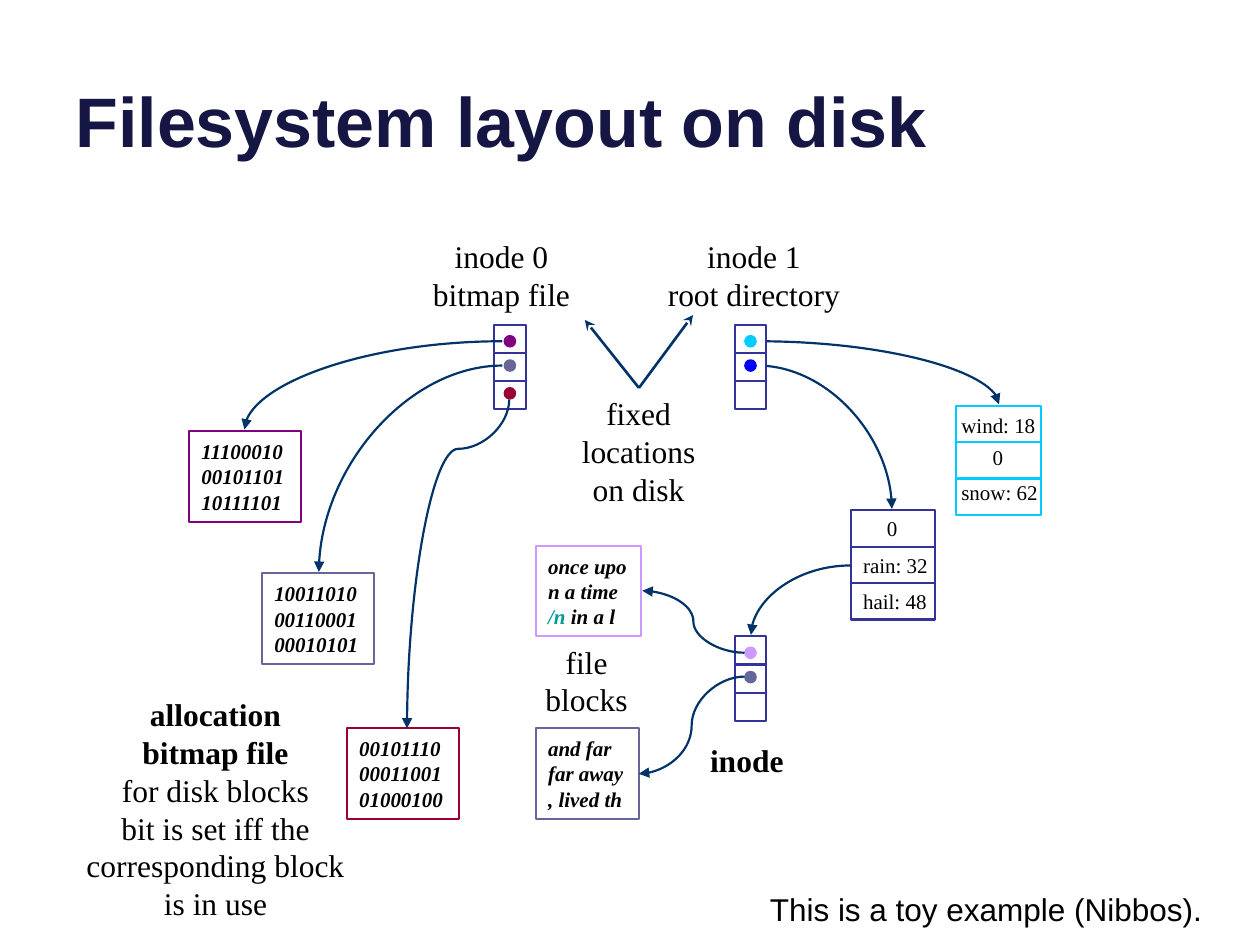
"""Build a slide that shows how a small filesystem lies on disk."""
import pptx
import pptx.util
import pptx.dml.color
import pptx.enum.shapes
import pptx.enum.text
import pptx.oxml.ns
from lxml import etree

Cm = pptx.util.Cm
Pt = pptx.util.Pt
Shape = pptx.enum.shapes.MSO_SHAPE
Link = pptx.enum.shapes.MSO_CONNECTOR
Align = pptx.enum.text.PP_ALIGN
Anchor = pptx.enum.text.MSO_ANCHOR
qn = pptx.oxml.ns.qn


def color(code):
    return pptx.dml.color.RGBColor.from_string(code)


class Deck:
    ink = "000000"
    navy = "161645"
    blue = "333399"
    wire = "003367"
    serif = "Times New Roman"
    sans = "Arial"
    thin = 1.25
    side = 0.64
    tall = 1.7
    rows = (0.33, 0.82, 1.38)

    def __init__(self):
        self.show = pptx.Presentation()
        self.show.slide_width = Cm(25.4)
        self.show.slide_height = Cm(19.05)
        self.slide = self.show.slides.add_slide(self.show.slide_layouts[5])
        self.shapes = self.slide.shapes

    def style(self, para, size, face=None, bold=False, slant=False, tint=None):
        font = para.font
        font.name = face or self.serif
        font.size = Pt(size)
        font.bold = bold
        font.italic = slant
        font.color.rgb = color(tint or self.ink)

    def title(self, words):
        head = self.shapes.title
        head.left, head.top = Cm(1.27), Cm(-0.94)
        head.width, head.height = Cm(22.86), Cm(4.32)
        frame = head.text_frame
        frame.text = words
        frame.vertical_anchor = Anchor.BOTTOM
        para = frame.paragraphs[0]
        para.alignment = Align.LEFT
        self.style(para, 40, self.sans, True, tint=self.navy)

    def label(self, x, y, w, h, lines, size=18, align=Align.CENTER,
              wrap=False, face=None, bold=0):
        box = self.shapes.add_textbox(Cm(x), Cm(y), Cm(w), Cm(h))
        frame = box.text_frame
        frame.text = "\n".join(lines)
        frame.word_wrap = wrap
        for i, para in enumerate(frame.paragraphs):
            para.alignment = align
            self.style(para, size, face, i < bold)

    def shape(self, kind, x, y, w, h, line, fill=None):
        item = self.shapes.add_shape(kind, Cm(x), Cm(y), Cm(w), Cm(h))
        item.shadow.inherit = False
        if fill:
            item.fill.solid()
            item.fill.fore_color.rgb = color(fill)
        else:
            item.fill.background()
        item.line.color.rgb = color(line)
        item.line.width = Pt(self.thin)
        return item

    def block(self, x, y, w, tint, lines):
        item = self.shape(Shape.RECTANGLE, x, y, w, 1.83, tint)
        frame = item.text_frame
        frame.word_wrap = False
        frame.text = "\n".join(lines)
        for para in frame.paragraphs:
            para.alignment = Align.LEFT
            self.style(para, 12, bold=True, slant=True)
        return frame

    def link(self, kind, start, end, tint=None, width=None):
        ends = [Cm(v) for v in (*start, *end)]
        item = self.shapes.add_connector(kind, *ends)
        item.line.color.rgb = color(tint or self.wire)
        item.line.width = Pt(width or self.thin)
        etree.SubElement(item._element.spPr, qn("a:effectLst"))
        return item

    def tip(self, item, tag, kind):
        line = item._element.spPr.find(qn("a:ln"))
        etree.SubElement(line, qn(tag), type=kind)

    def arrow(self, start, end):
        item = self.link(Link.STRAIGHT, start, end, width=1.5)
        self.tip(item, "a:headEnd", "stealth")

    def curve(self, start, end, bend=2, turn=0, mid=None):
        item = self.link(Link.CURVE, start, end)
        self.tip(item, "a:tailEnd", "triangle")
        props = item._element.spPr
        geom = props.find(qn("a:prstGeom"))
        geom.set("prst", f"curvedConnector{bend}")
        if turn:
            props.find(qn("a:xfrm")).set("rot", str(turn * 60000))
        if mid:
            etree.SubElement(geom.find(qn("a:avLst")), qn("a:gd"),
                             name="adj1", fmla=f"val {round(mid * 100000)}")

    def stack(self, x, y, w, h, tint):
        self.shape(Shape.RECTANGLE, x, y, w, h, tint, "FFFFFF")
        for i in (1, 2):
            level = y + h * i / 3
            self.link(Link.STRAIGHT, (x, level), (x + w, level), tint)

    def inode(self, x, y, tints):
        self.stack(x, y, self.side, self.tall, self.blue)
        size = 0.21
        for row, tint in zip(self.rows, tints):
            self.shape(Shape.OVAL, x + (self.side - size) / 2,
                       y + row - size / 2, size, size, tint, tint)

    def folder(self, x, y, tint, items):
        self.stack(x, y, 1.7, 2.2, tint)
        for left, top, wide, words in items:
            self.label(left, top, wide, 0.76, [words], 12, Align.LEFT)


def main():
    deck = Deck()
    deck.title("Filesystem layout on disk")
    deck.label(8.46, 4.65, 3.3, 1.8, ["inode 0", "bitmap file"])
    deck.label(13.18, 4.65, 4.04, 1.8, ["inode 1", "root directory"])

    deck.folder(17.15, 10.29, deck.blue, [
        (17.63, 10.26, 0.71, "0"),
        (17.15, 11.02, 1.83, "rain: 32"),
        (17.15, 11.73, 1.8, "hail: 48")])
    deck.folder(19.28, 8.18, "00CCFF", [
        (19.76, 8.84, 0.71, "0"),
        (19.13, 8.2, 2.01, "wind: 18"),
        (19.13, 9.55, 2.06, "snow: 62")])
    deck.curve((15.27, 7.37), (17.98, 10.26))
    deck.curve((15.27, 6.88), (20.14, 8.15))

    deck.inode(9.96, 6.55, ["800080", "666699", "990033"])
    deck.inode(14.81, 6.55, ["00CCFF", "0000FF"])
    deck.inode(14.81, 12.83, ["CC99FF", "666699"])

    deck.block(3.81, 8.69, 2.26, "800080",
               ["11100010", "00101101", "10111101"])
    deck.block(5.28, 11.56, 2.26, "666699",
               ["10011010", "00110001", "00010101"])
    deck.block(6.99, 14.68, 2.26, "990033",
               ["00101110", "00011001", "01000100"])
    deck.block(10.8, 14.68, 2.08, "666699",
               ["and far", "far away", ", lived th"])
    tale = deck.block(10.8, 11, 2.13, "CC99FF", ["once upo", "n a time", "/n"])
    last = tale.paragraphs[2]
    last.runs[0].font.color.rgb = color("009999")
    last.add_run().text = " in a l"

    deck.curve((10.13, 6.88), (4.93, 8.66))
    deck.curve((10.13, 7.37), (6.43, 11.53))
    deck.curve((5.92, 10.34), (12.55, 12.4), 3, 90, 0.15)
    deck.curve((17.15, 11.4), (15.14, 12.8))
    deck.curve((15.01, 13.16), (12.95, 11.91), 3)
    deck.curve((15.01, 13.64), (12.88, 15.6), 3)

    deck.label(13.34, 14.81, 3.43, 1.02, ["inode"], wrap=True, bold=1)
    deck.label(10.62, 12.83, 2.41, 1.8, ["file blocks"], wrap=True)
    deck.label(1.27, 13.89, 6.15, 4.88, [
        "allocation", "bitmap file", "for disk blocks",
        "bit is set iff the corresponding block is in use"],
        wrap=True, bold=2)
    deck.label(11.15, 7.82, 3.45, 2.57, ["fixed locations on disk"], wrap=True)
    for point in ((11.79, 6.45), (13.97, 6.35)):
        deck.arrow(point, (12.88, 7.82))
    deck.label(15.27, 17.81, 9.5, 1.02, ["This is a toy example (Nibbos)."],
               align=Align.LEFT, face=deck.sans)
    deck.show.save("out.pptx")


if __name__ == "__main__":
    main()
